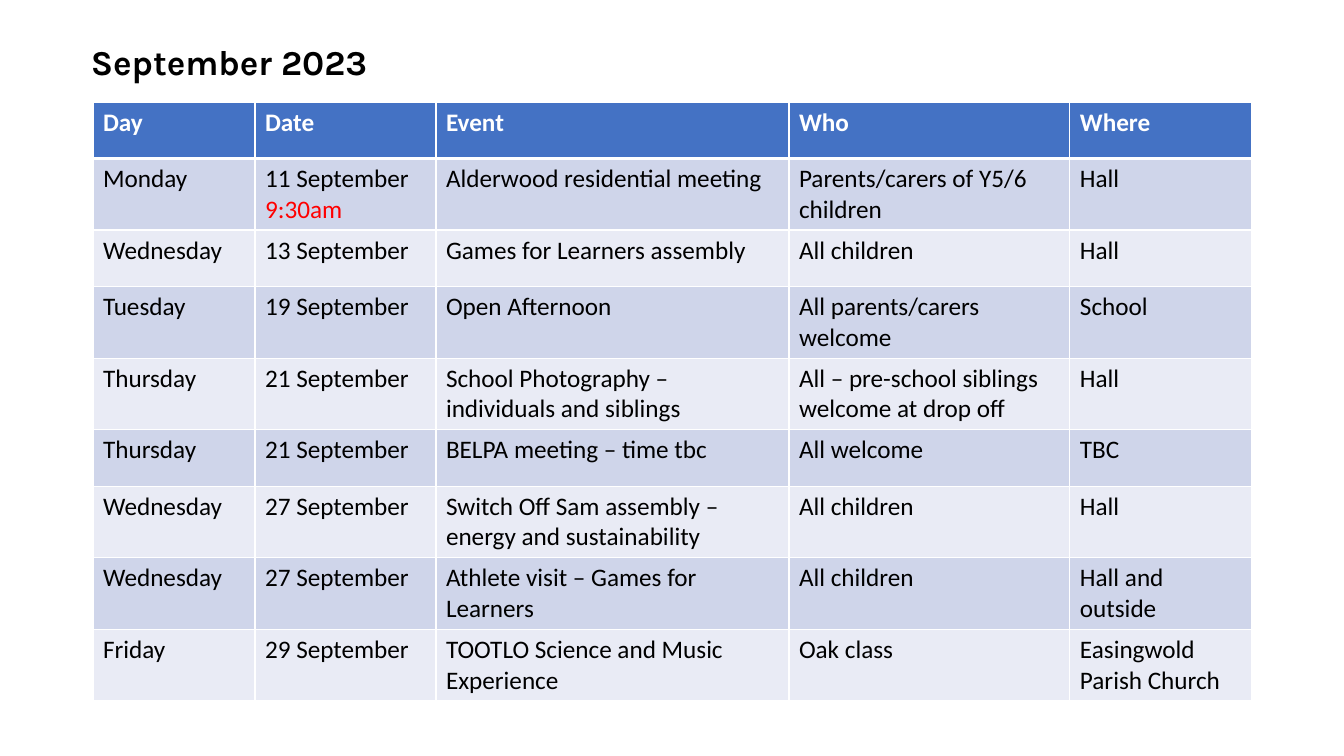
from pptx import Presentation
from pptx.dml.color import RGBColor
from pptx.oxml import parse_xml
from pptx.oxml.ns import nsdecls
from pptx.util import Pt

EMU_PER_PX = 914400 / 100.8
SLIDE_SIZE = (1344, 756)
TITLE_BOX = (81, 36, 449, 52)
CALENDAR_BOX = (93, 102, 1159, 508)

WHITE, BLACK, RED = "FFFFFF", "000000", "FF0000"
HEADER_FILL = "4472C4"
BAND_FILLS = ("CFD5EA", "E9EBF5")

TITLE_FORMAT = {"name": "Karla", "size": Pt(25), "bold": True}
HEADER_FORMAT = {"name": "Calibri", "size": Pt(18), "bold": True}
EVENT_FORMAT = {"name": "Calibri", "size": Pt(18), "bold": False}

COLUMN_WIDTHS = (162, 181, 353, 281, 182)
HEADINGS = ("Day", "Date", "Event", "Who", "Where")
# A line break in a date separates the day from its start time
EVENTS = (
    ("Monday", "11 September\n9:30am", "Alderwood residential meeting",
     "Parents/carers of Y5/6 children", "Hall"),
    ("Wednesday", "13 September", "Games for Learners assembly", "All children", "Hall"),
    ("Tuesday", "19 September", "Open Afternoon", "All parents/carers welcome", "School"),
    ("Thursday", "21 September", "School Photography – individuals and siblings",
     "All – pre-school siblings welcome at drop off", "Hall"),
    ("Thursday", "21 September", "BELPA meeting – time tbc", "All welcome", "TBC"),
    ("Wednesday", "27 September", "Switch Off Sam assembly – energy and sustainability",
     "All children", "Hall"),
    ("Wednesday", "27 September", "Athlete visit – Games for Learners",
     "All children", "Hall and outside"),
    ("Friday", "29 September", "TOOTLO Science and Music Experience",
     "Oak class", "Easingwold Parish Church"),
)


def px(length):
    return round(length * EMU_PER_PX)


def rgb(color):
    return RGBColor.from_string(color)


def write_line(paragraph, text, color, font_format):
    run = paragraph.add_run()
    run.text = text
    run.font.color.rgb = rgb(color)
    for attribute, value in font_format.items():
        setattr(run.font, attribute, value)


def set_borders(cell, top=1, bottom=1):
    sides = {"L": 1, "R": 1, "T": top, "B": bottom}
    cell_properties = cell._tc.get_or_add_tcPr()
    for side, points in sides.items():
        cell_properties.append(parse_xml(
            f'<a:ln{side} {nsdecls("a")} w="{Pt(points)}"><a:solidFill>'
            f'<a:srgbClr val="{WHITE}"/></a:solidFill></a:ln{side}>'))


def add_title(slide, box):
    frame = slide.shapes.add_textbox(*map(px, box)).text_frame
    frame.word_wrap = True
    write_line(frame.paragraphs[0], "September 2023", BLACK, TITLE_FORMAT)


def fill_cell(cell, text, fill, color, font_format):
    cell.fill.solid()
    cell.fill.fore_color.rgb = rgb(fill)
    frame = cell.text_frame
    main_text, _, start_time = text.partition("\n")
    write_line(frame.paragraphs[0], main_text, color, font_format)
    if start_time:
        write_line(frame.add_paragraph(), start_time, RED, font_format)


def add_calendar(slide, box):
    rows = (HEADINGS, *EVENTS)
    calendar = slide.shapes.add_table(len(rows), len(HEADINGS), *map(px, box)).table
    for column, width in zip(calendar.columns, COLUMN_WIDTHS):
        column.width = px(width)
    for row in calendar.rows:
        row.height = px(box[3] / len(rows))

    for row_index, texts in enumerate(rows):
        for column_index, text in enumerate(texts):
            cell = calendar.cell(row_index, column_index)
            # The thick rule lies between the headings and the first event
            set_borders(cell, top=3 if row_index == 1 else 1,
                        bottom=3 if row_index == 0 else 1)
            if row_index == 0:
                fill_cell(cell, text, HEADER_FILL, WHITE, HEADER_FORMAT)
            else:
                band = BAND_FILLS[(row_index - 1) % 2]
                fill_cell(cell, text, band, BLACK, EVENT_FORMAT)


def main():
    presentation = Presentation()
    presentation.slide_width, presentation.slide_height = map(px, SLIDE_SIZE)
    slide = presentation.slides.add_slide(presentation.slide_layouts[6])
    add_calendar(slide, CALENDAR_BOX)
    add_title(slide, TITLE_BOX)
    presentation.save("out.pptx")


if __name__ == "__main__":
    main()
